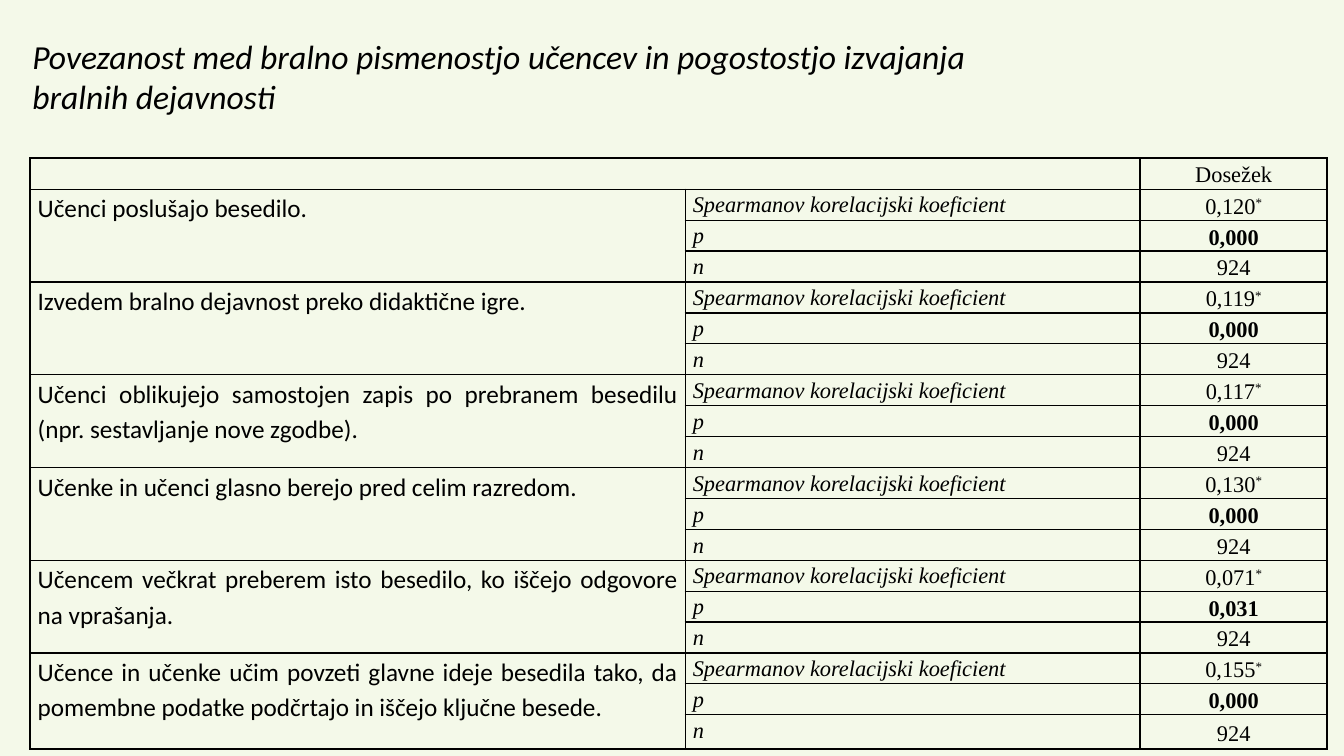
from dataclasses import dataclass

from lxml import etree
from pptx import Presentation
from pptx import util as u
from pptx.dml.color import RGBColor
from pptx.enum import text
from pptx.oxml import ns
from pptx.table import Table, _Cell

BLACK = RGBColor(0x00, 0x00, 0x00)
PALE_GREEN = RGBColor(0xF4, 0xF9, 0xE9)
SANS = "Calibri"
SERIF = "Times New Roman"
COLUMN_WIDTHS = (16.51, 11.46, 4.72)
ROW_HEIGHT = u.Cm(13.62) // 18
LAST_ROW_HEIGHT = u.Cm(0.86)
STATISTICS = ("Spearmanov korelacijski koeficient", "p", "n")


@dataclass
class Activity:
    name: str
    coefficient: str
    p_value: str = "0,000"
    n: str = "924"


ACTIVITIES = (
    Activity("Učenci poslušajo besedilo.", "0,120"),
    Activity("Izvedem bralno dejavnost preko didaktične igre.", "0,119"),
    Activity("Učenci oblikujejo samostojen zapis po prebranem besedilu "
             "(npr. sestavljanje nove zgodbe).", "0,117"),
    Activity("Učenke in učenci glasno berejo pred celim razredom.", "0,130"),
    Activity("Učencem večkrat preberem isto besedilo, ko iščejo odgovore "
             "na vprašanja.", "0,071", "0,031"),
    Activity("Učence in učenke učim povzeti glavne ideje besedila tako, da "
             "pomembne podatke podčrtajo in iščejo ključne besede.", "0,155"),
)


def set_border(cell: _Cell, side: str, width: float) -> None:
    tcPr = cell._tc.get_or_add_tcPr()
    ln = etree.SubElement(tcPr, ns.qn(f"a:ln{side}"), w=str(u.Pt(width)))
    fill = etree.SubElement(ln, ns.qn("a:solidFill"))
    etree.SubElement(fill, ns.qn("a:srgbClr"), val=str(BLACK))


def format_grid(table: Table) -> None:
    last_row = len(table.rows) - 1
    last_col = len(table.columns) - 1
    for row in range(last_row + 1):
        for col in range(last_col + 1):
            cell = table.cell(row, col)
            outer = {"L": col == 0, "R": col == last_col,
                     "T": row == 0, "B": row == last_row}
            for side, is_outer in outer.items():
                set_border(cell, side, 1.5 if is_outer else 1)
            cell.fill.background()
            cell.margin_left = cell.margin_right = u.Cm(0.19)
            cell.margin_top = cell.margin_bottom = 0
            cell.text_frame.paragraphs[0].font.size = u.Pt(16)


def write_cell(cell: _Cell, content: str, align: text.PP_ALIGN,
               font: str = SERIF, size: int = 16, bold: bool = False,
               italic: bool = False, mark: str = "") -> None:
    p = cell.text_frame.paragraphs[0]
    p.text = content
    if mark:
        r = p.add_run()
        r.text = mark
        r._r.get_or_add_rPr().set("baseline", "30000")
    p.alignment = align
    p.line_spacing = 1.15
    for r in p.runs:
        r.font.name = font
        r.font.size = u.Pt(size)
        r.font.bold = bold
        r.font.italic = italic
        r.font.color.rgb = BLACK


def write_activity(table: Table, top: int, activity: Activity) -> None:
    justify = text.PP_ALIGN.JUSTIFY
    table.cell(top, 0).merge(table.cell(top + 2, 0))
    write_cell(table.cell(top, 0), activity.name, justify, SANS, 18)
    values = (activity.coefficient, activity.p_value, activity.n)
    for i, (statistic, value) in enumerate(zip(STATISTICS, values)):
        write_cell(table.cell(top + i, 1), statistic, justify, italic=True)
        cell = table.cell(top + i, 2)
        write_cell(cell, value, text.PP_ALIGN.CENTER,
                   bold=statistic == "p", mark="*" if i == 0 else "")
        cell.vertical_anchor = text.MSO_ANCHOR.MIDDLE


def main() -> None:
    prs = Presentation()
    prs.slide_width, prs.slide_height = u.Cm(33.87), u.Cm(19.05)
    s = prs.slides.add_slide(prs.slide_layouts[5])
    s.background.fill.solid()
    s.background.fill.fore_color.rgb = PALE_GREEN

    title = s.shapes.title
    title.left, title.top = u.Cm(0.56), u.Cm(0.76)
    title.width, title.height = u.Cm(32), u.Cm(2.31)
    tf = title.text_frame
    tf.text = ("Povezanost med bralno pismenostjo učencev in pogostostjo "
               "izvajanja\nbralnih dejavnosti")
    tf.word_wrap = True
    tf.auto_size = text.MSO_AUTO_SIZE.SHAPE_TO_FIT_TEXT
    tf.vertical_anchor = text.MSO_ANCHOR.MIDDLE
    for p in tf.paragraphs:
        p.alignment = text.PP_ALIGN.LEFT
        p.space_before = u.Pt(0)
        for r in p.runs:
            r.font.name = SANS
            r.font.size = u.Pt(24)
            r.font.italic = True
            r.font.color.rgb = BLACK

    row_count = 1 + len(STATISTICS) * len(ACTIVITIES)
    height = ROW_HEIGHT * (row_count - 1) + LAST_ROW_HEIGHT
    sp = s.shapes.add_table(row_count, len(COLUMN_WIDTHS), u.Cm(0.76),
                            u.Cm(3.99), u.Cm(sum(COLUMN_WIDTHS)), height)
    table = sp.table
    table.first_row = table.horz_banding = False
    for column, width in zip(table.columns, COLUMN_WIDTHS):
        column.width = u.Cm(width)
    for row in table.rows:
        row.height = ROW_HEIGHT
    table.rows[row_count - 1].height = LAST_ROW_HEIGHT
    format_grid(table)

    table.cell(0, 0).merge(table.cell(0, 1))
    write_cell(table.cell(0, 2), "Dosežek", text.PP_ALIGN.CENTER)
    for i, activity in enumerate(ACTIVITIES):
        write_activity(table, 1 + i * len(STATISTICS), activity)

    prs.save("out.pptx")


if __name__ == "__main__":
    main()
